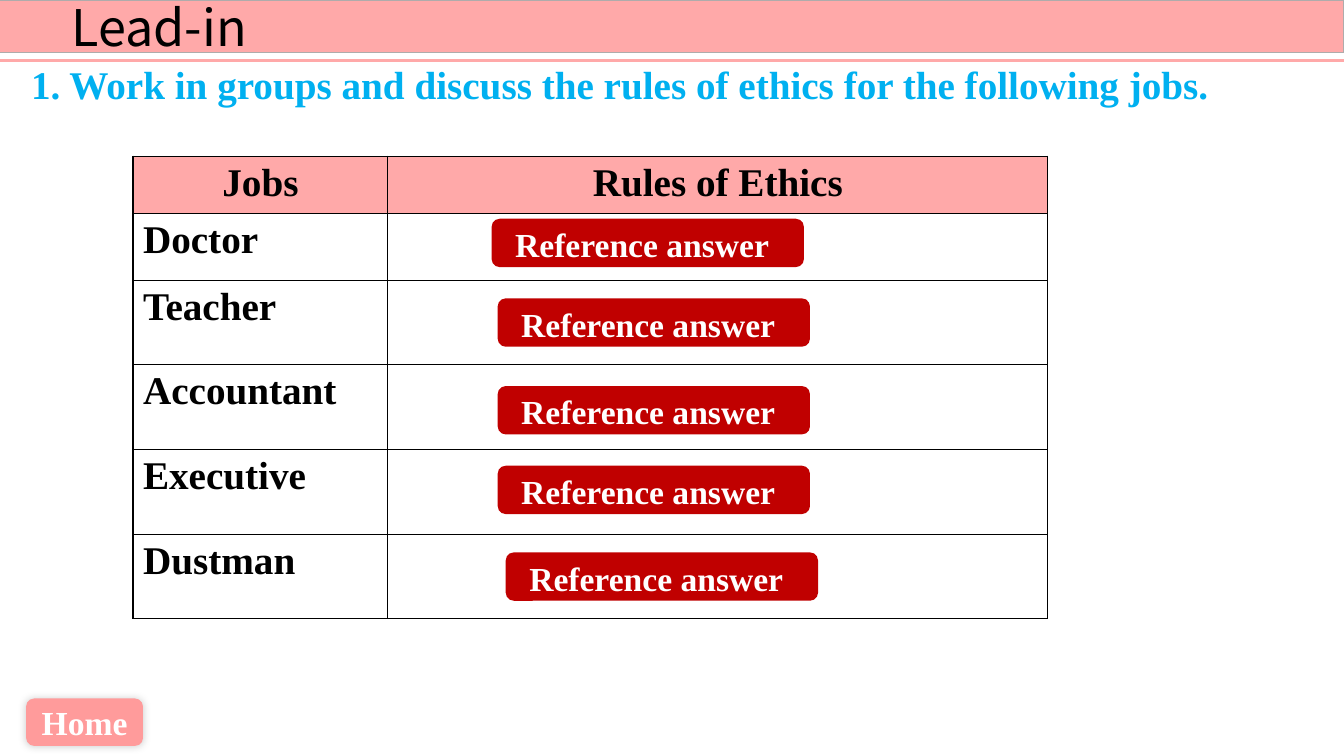
from lxml import etree
from pptx import Presentation
from pptx.dml.color import RGBColor
from pptx.enum import shapes, text
from pptx.oxml import parse_xml
from pptx.oxml.ns import qn
from pptx.util import Inches, Pt

NS = 'xmlns:a="http://schemas.openxmlformats.org/drawingml/2006/main"'
SERIF = "Times New Roman"
PINK = "FFA9A9"


def color(value):
    return RGBColor.from_string(value)


def add_run(paragraph, words, size, value, font=SERIF, bold=True):
    run = paragraph.add_run()
    run.text = words
    run.font.size = Pt(size)
    run.font.name = font
    run.font.bold = bold
    run.font.color.rgb = color(value)


deck = Presentation()
deck.slide_width, deck.slide_height = Inches(13.34), Inches(7.5)
slide = deck.slides.add_slide(deck.slide_layouts[6])

# Title band with its rule
band = slide.shapes.add_shape(shapes.MSO_SHAPE.RECTANGLE, Inches(-0.01), 0, Inches(13.35), Inches(0.52))
band.shadow.inherit = False
band.fill.solid()
band.fill.fore_color.rgb = color(PINK)
band.line.color.rgb = color("AFABAB")
band.line.width = Pt(1)

rule = slide.shapes.add_connector(shapes.MSO_CONNECTOR.STRAIGHT, 0, Inches(0.6), Inches(13.35), Inches(0.6))
rule.line.color.rgb = color(PINK)
rule.line.width = Pt(2)
etree.SubElement(rule._element.spPr, qn("a:effectLst"))

title = slide.shapes.add_textbox(Inches(0.61), Inches(-0.09), Inches(2.27), Inches(0.71))
title.text_frame.word_wrap = True
add_run(title.text_frame.paragraphs[0], "Lead-in", 36, "000000", "Noto Sans CJK SC", False)

# Task with a hanging number
task = slide.shapes.add_textbox(Inches(0.21), Inches(0.68), Inches(12.43), Inches(0.43))
task.text_frame.word_wrap = True
task_line = task.text_frame.paragraphs[0]
task_line.alignment = text.PP_ALIGN.JUSTIFY
task_line.line_spacing = 0.7
indent = task_line._p.get_or_add_pPr()
indent.set("marL", str(Inches(0.35)))
indent.set("indent", str(-Inches(0.35)))
add_run(task_line, "1. Work in groups and discuss the rules of ethics for the following jobs.", 28, "00B0F0")

# Table of jobs
rows = [("Jobs", "Rules of Ethics")] + [
    (job, "") for job in ("Doctor", "Teacher", "Accountant", "Executive", "Dustman")]
heights = [0.57, 0.66] + [0.84] * 4
jobs = slide.shapes.add_table(len(rows), 2, Inches(1.32), Inches(1.55),
                              Inches(9.08), Inches(sum(heights))).table
jobs.horz_banding = False
for column, width in zip(jobs.columns, (2.53, 6.55)):
    column.width = Inches(width)
for r, (row, height) in enumerate(zip(rows, heights)):
    jobs.rows[r].height = Inches(height)
    for c, words in enumerate(row):
        cell = jobs.cell(r, c)
        for side in "LRTB":
            cell._tc.get_or_add_tcPr().append(parse_xml(
                f'<a:ln{side} {NS} w="12700"><a:solidFill><a:srgbClr val="000000"/>'
                f'</a:solidFill></a:ln{side}>'))
        cell.fill.background()
        paragraph = cell.text_frame.paragraphs[0]
        if r == 0:
            cell.fill.solid()
            cell.fill.fore_color.rgb = color(PINK)
            paragraph.alignment = text.PP_ALIGN.CENTER
        if words:
            add_run(paragraph, words, 28, "000000")

# Home button and answer buttons
answer = [("Reference answer", 24), (" ", 32)]
answer_spots = [(4.88, 2.17), (4.94, 2.96), (4.94, 3.83), (4.94, 4.62), (5.02, 5.48)]
buttons = [(0.26, 6.93, 1.16, 0.47, "FF9B9B", 1.0, [("Home", 24)])]
buttons += [(x, y, 3.1, 0.48, "C00000", 0.9, answer) for x, y in answer_spots]
for x, y, width, height, fill, spacing, label in buttons:
    button = slide.shapes.add_shape(shapes.MSO_SHAPE.ROUNDED_RECTANGLE,
                                    Inches(x), Inches(y), Inches(width), Inches(height))
    button.shadow.inherit = False
    button.fill.solid()
    button.fill.fore_color.rgb = color(fill)
    button.line.fill.background()
    button.text_frame.word_wrap = True
    button.text_frame.vertical_anchor = text.MSO_ANCHOR.MIDDLE
    paragraph = button.text_frame.paragraphs[0]
    paragraph.alignment = text.PP_ALIGN.CENTER
    paragraph.line_spacing = spacing
    for words, size in label:
        add_run(paragraph, words, size, "FFFFFF")
    if label is not answer:
        # Soft shadow under Home
        button._element.spPr.find(qn("a:effectLst")).append(parse_xml(
            f'<a:outerShdw {NS} blurRad="{Pt(6)}" dist="0" dir="18900000">'
            '<a:srgbClr val="000000"><a:alpha val="20000"/></a:srgbClr></a:outerShdw>'))

deck.save("out.pptx")
